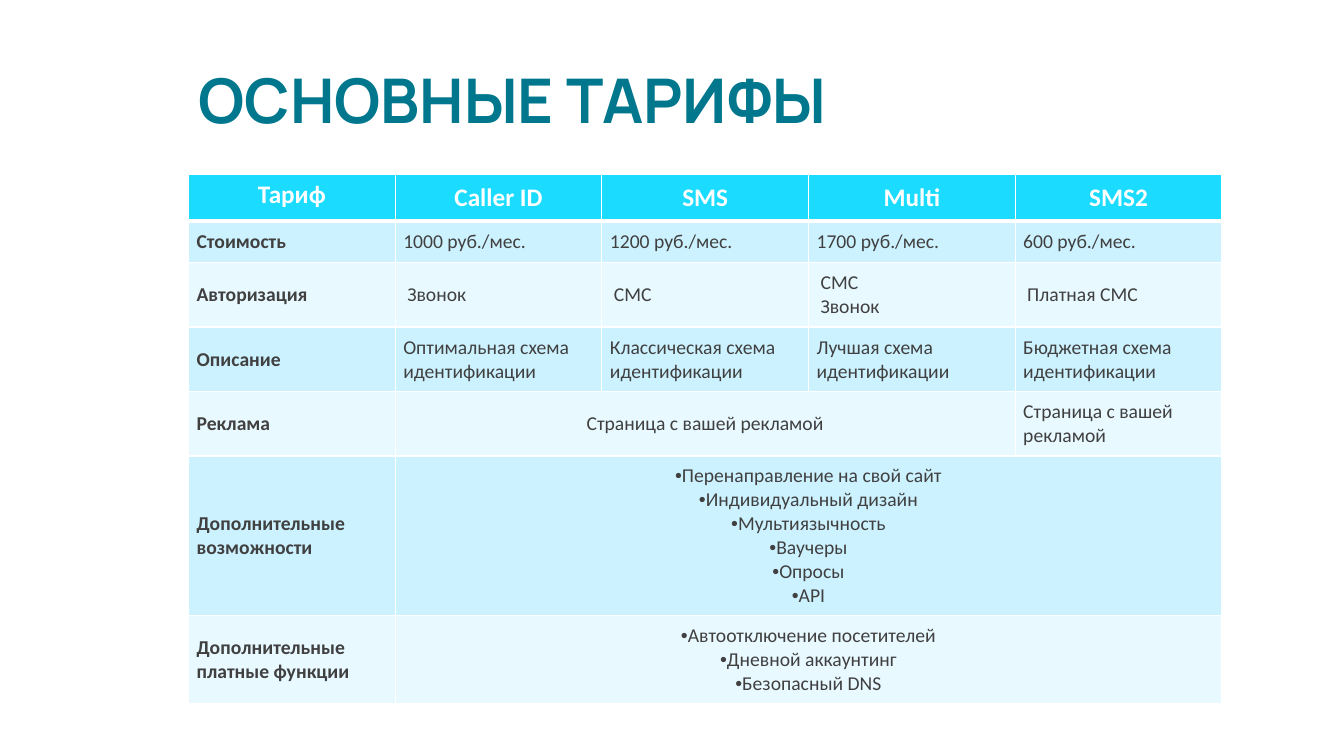
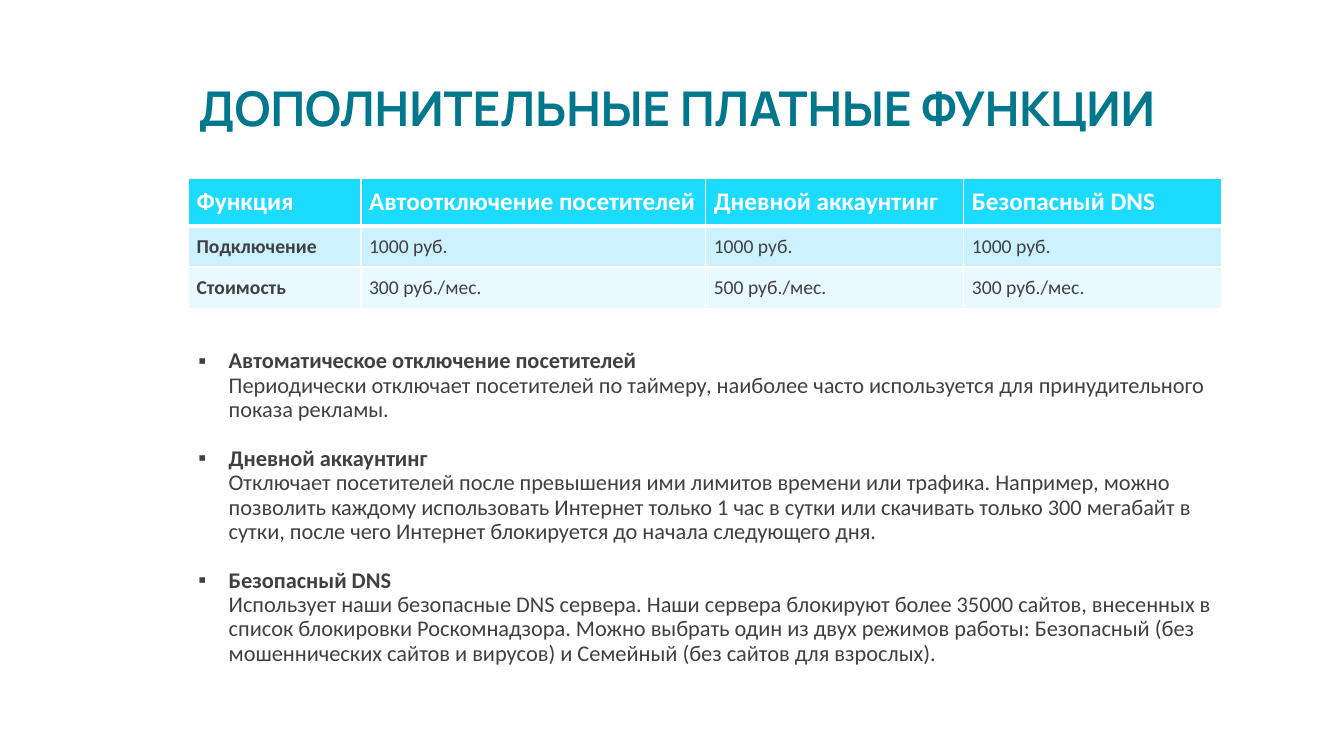
from lxml.etree import SubElement
from pptx import Presentation
from pptx.dml.color import RGBColor
from pptx.enum.text import MSO_ANCHOR as Anchor, MSO_AUTO_SIZE as AutoSize, PP_ALIGN as Align
from pptx.oxml.ns import qn
from pptx.util import Inches, Pt

TITLE_COLOR = "00778D"
TEXT_COLOR = "404040"
WHITE = "FFFFFF"
HEADER_FILL = "1BDCFF"
BAND_FILLS = ("CDF2FF", "E8F9FF")
TITLE_FONT = "Manrope"
BODY_FONT = "Calibri"
LEFT, WIDTH = 1.87, 10.25
TITLE_TOP, TITLE_HEIGHT = 0.59, 0.81
CELL_MARGIN = 0.08

TARIFFS = [
    ["Тариф", "Caller ID", "SMS", "Multi", "SMS2"],
    ["Стоимость", "1000 руб./мес.", "1200 руб./мес.", "1700 руб./мес.", "600 руб./мес."],
    ["Авторизация", "Звонок", "СМС", "СМС\nЗвонок", "Платная СМС"],
    ["Описание"] + [f"{kind} схема\nидентификации" for kind in
                    ("Оптимальная", "Классическая", "Лучшая", "Бюджетная")],
    ["Реклама", "Страница с вашей рекламой", None, None, "Страница с вашей рекламой"],
    ["Дополнительные\nвозможности",
     ["Перенаправление на свой сайт", "Индивидуальный дизайн", "Мультиязычность",
      "Ваучеры", "Опросы", "API"], None, None, None],
    ["Дополнительные платные функции",
     ["Автоотключение посетителей", "Дневной аккаунтинг", "Безопасный DNS"],
     None, None, None],
]

PAID_FEATURES = [
    ["Функция", "Автоотключение посетителей", "Дневной аккаунтинг", "Безопасный DNS"],
    ["Подключение", "1000 руб.", "1000 руб.", "1000 руб."],
    ["Стоимость", "300 руб./мес.", "500 руб./мес.", "300 руб./мес."],
]

FEATURE_NOTES = [
    ("Автоматическое отключение посетителей",
     "Периодически отключает посетителей по таймеру, наиболее часто используется "
     "для принудительного показа рекламы."),
    ("Дневной аккаунтинг",
     "Отключает посетителей после превышения ими лимитов времени или трафика. "
     "Например, можно позволить каждому использовать Интернет только 1 час в сутки "
     "или скачивать только 300 мегабайт в сутки, после чего Интернет блокируется "
     "до начала следующего дня."),
    ("Безопасный DNS",
     "Использует наши безопасные DNS сервера. Наши сервера блокируют более 35000 "
     "сайтов, внесенных в список блокировки Роскомнадзора. Можно выбрать один из двух "
     "режимов работы: Безопасный (без мошеннических сайтов и вирусов) и Семейный "
     "(без сайтов для взрослых)."),
]


def rgb(color):
    return RGBColor.from_string(color)


def add_text(paragraph, text, size=14, color=TEXT_COLOR, bold=False, font=BODY_FONT):
    """Append text to a paragraph; each newline becomes a line break."""
    for number, line in enumerate(text.split("\n")):
        if number:
            paragraph.add_line_break()
        run = paragraph.add_run()
        run.text = line
        run.font.size = Pt(size)
        run.font.bold = bold
        run.font.name = font
        run.font.color.rgb = rgb(color)


def add_bullet(paragraph, mark, margin, indent):
    properties = paragraph._p.get_or_add_pPr()
    properties.set("marL", str(Inches(margin)))
    properties.set("indent", str(Inches(indent)))
    SubElement(properties, qn("a:buFont"), typeface="Arial")
    SubElement(properties, qn("a:buChar"), char=mark)


def paragraphs_for(frame, count):
    """Return the frame's first paragraph followed by new ones."""
    return [frame.paragraphs[0]] + [frame.add_paragraph() for _ in range(count - 1)]


def set_title(slide, text, size):
    title = slide.shapes.title
    title.left, title.top = Inches(LEFT), Inches(TITLE_TOP)
    title.width, title.height = Inches(WIDTH), Inches(TITLE_HEIGHT)
    frame = title.text_frame
    frame.auto_size = AutoSize.NONE
    frame.word_wrap = True
    frame.vertical_anchor = Anchor.BOTTOM
    paragraph = frame.paragraphs[0]
    paragraph.alignment = Align.LEFT
    paragraph.line_spacing = 0.85
    add_text(paragraph, text, size=size, color=TITLE_COLOR, bold=True, font=TITLE_FONT)


def set_borders(cell, bottom):
    properties = cell._tc.get_or_add_tcPr()
    for side, width in (("L", 1), ("R", 1), ("T", 1), ("B", bottom)):
        line = SubElement(properties, qn(f"a:ln{side}"), w=str(Pt(width)))
        fill = SubElement(line, qn("a:solidFill"))
        SubElement(fill, qn("a:srgbClr"), val=WHITE)


def fill_cell(cell, content, align, **text_format):
    """Write a string, or a list as bulleted paragraphs."""
    bulleted = isinstance(content, list)
    lines = content if bulleted else [content]
    for paragraph, line in zip(paragraphs_for(cell.text_frame, len(lines)), lines):
        paragraph.alignment = align
        if bulleted:
            add_bullet(paragraph, "•", 0, 0)
        add_text(paragraph, line, **text_format)


def add_price_table(slide, top, rows, widths, heights, header_align):
    """Add a banded table; None in a row extends the cell to its left."""
    table = slide.shapes.add_table(
        len(rows), len(widths), Inches(LEFT), Inches(top),
        Inches(WIDTH), Inches(sum(heights))).table
    for column, width in zip(table.columns, widths):
        column.width = Inches(width)
    for row, height in zip(table.rows, heights):
        row.height = Inches(height)

    for r, contents in enumerate(rows):
        header = r == 0
        for c, content in enumerate(contents):
            cell = table.cell(r, c)
            set_borders(cell, bottom=3 if header else 1)
            cell.fill.solid()
            cell.fill.fore_color.rgb = rgb(HEADER_FILL if header else BAND_FILLS[(r - 1) % 2])
            cell.margin_left = cell.margin_right = Inches(CELL_MARGIN)
            cell.margin_top = cell.margin_bottom = Inches(CELL_MARGIN)
            cell.vertical_anchor = Anchor.BOTTOM if header else Anchor.MIDDLE
            if content is None:
                continue
            last = c
            while last + 1 < len(contents) and contents[last + 1] is None:
                last += 1
            if last > c:
                cell.merge(table.cell(r, last))
            if header:
                fill_cell(cell, content, header_align, size=18, color=WHITE, bold=True)
            else:
                fill_cell(cell, content, Align.CENTER if last > c else Align.LEFT, bold=c == 0)
    return table


def add_feature_notes(slide):
    notes = slide.shapes.add_textbox(Inches(LEFT), Inches(3.42), Inches(10.55), Inches(3.83))
    frame = notes.text_frame
    frame.word_wrap = True
    paragraphs = paragraphs_for(frame, len(FEATURE_NOTES))
    for number, (paragraph, (name, description)) in enumerate(zip(paragraphs, FEATURE_NOTES)):
        paragraph.line_spacing = 0.9
        if number:
            paragraph.space_before = Pt(18)
        add_bullet(paragraph, "▪", 0.3, -0.3)
        add_text(paragraph, name, size=16, bold=True)
        paragraph.add_line_break()
        add_text(paragraph, description, size=16)


def build_tariffs(slide):
    set_title(slide, "ОСНОВНЫЕ ТАРИФЫ", 44)
    table = add_price_table(slide, 1.73, TARIFFS, [WIDTH / 5] * 5,
                            [0.46, 0.41, 0.64, 0.64, 0.64, 1.58, 0.88], Align.CENTER)
    corner = table.cell(0, 0)
    corner.vertical_anchor = Anchor.TOP
    corner.margin_top = Inches(0.05)
    for column in range(1, 5):
        table.cell(2, column).margin_left = Inches(0.12)


def build_paid_features(slide):
    set_title(slide, "ДОПОЛНИТЕЛЬНЫЕ ПЛАТНЫЕ ФУНКЦИИ", 34.2)
    add_price_table(slide, 1.77, PAID_FEATURES, [1.71, 3.42, 2.56, 2.56],
                    [0.47, 0.41, 0.41], Align.LEFT)
    add_feature_notes(slide)


def main():
    presentation = Presentation()
    presentation.slide_width, presentation.slide_height = Inches(13.33), Inches(7.5)
    title_only = presentation.slide_layouts[5]
    for build in (build_tariffs, build_paid_features):
        build(presentation.slides.add_slide(title_only))
    presentation.save("out.pptx")


if __name__ == "__main__":
    main()
